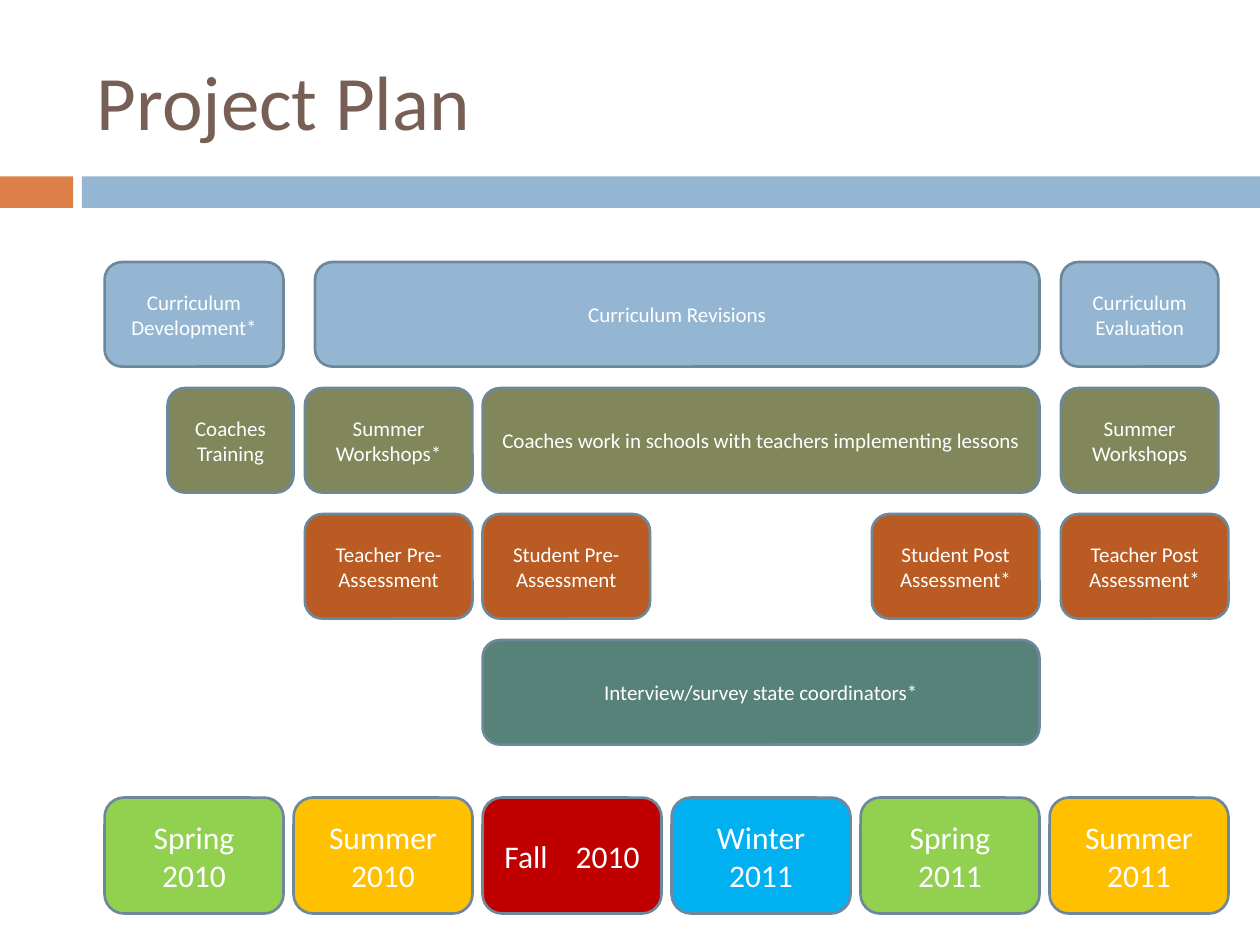
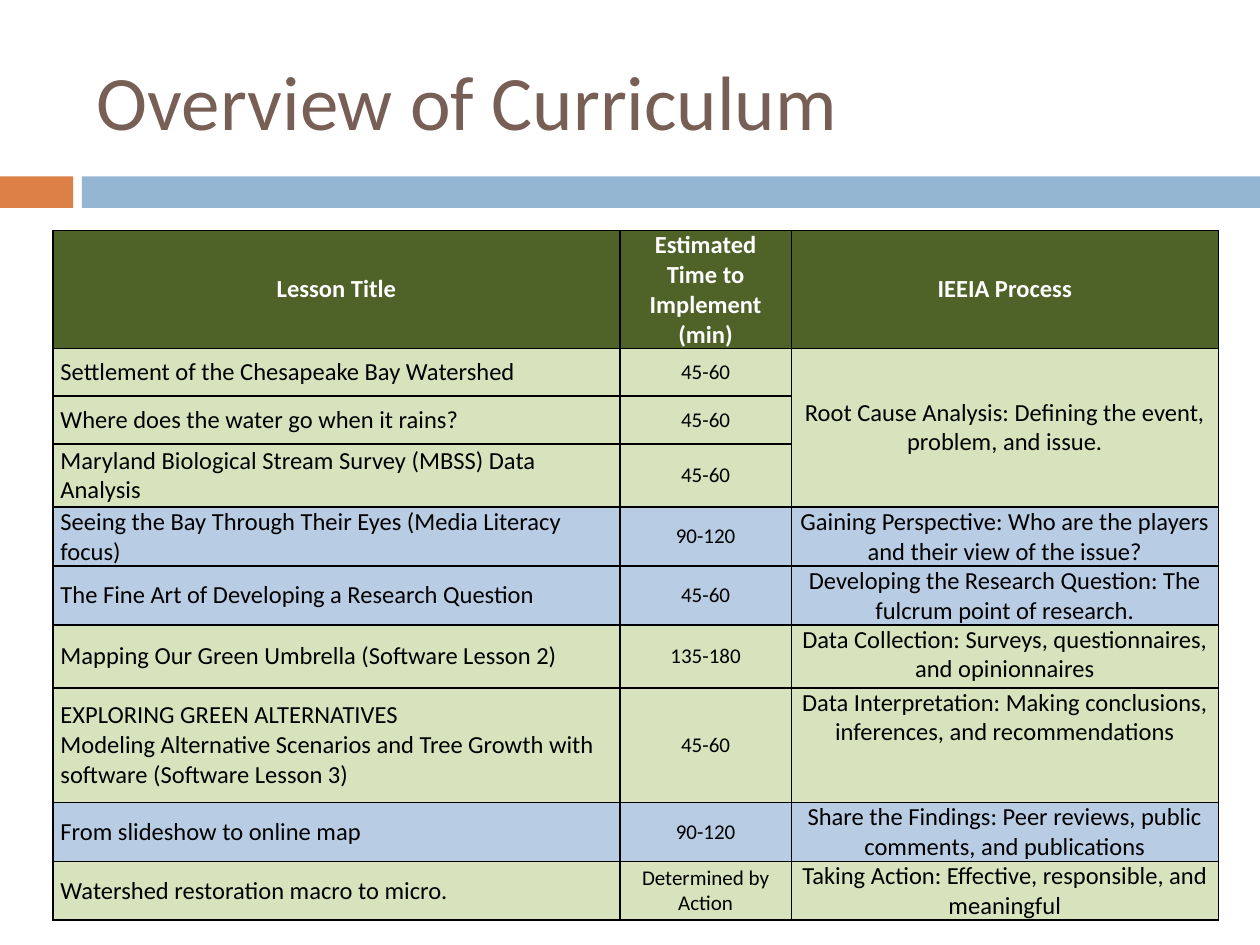
from dataclasses import dataclass

from lxml import etree
from pptx import Presentation
from pptx.dml.color import RGBColor
from pptx.enum import shapes, text
from pptx.oxml import ns
from pptx.util import Inches, Pt


@dataclass(frozen=True)
class Theme:
    font: str = "Calibri"
    title: str = "775F55"
    orange: str = "DD8047"
    blue: str = "94B6D2"
    outline: str = "6D879B"
    white: str = "FFFFFF"
    black: str = "000000"
    olive: str = "81875A"
    rust: str = "B95B22"
    teal: str = "578279"
    spring: str = "92D050"
    summer: str = "FFC000"
    fall: str = "C00000"
    winter: str = "00B0F0"
    header: str = "4F6228"
    green_row: str = "D6E3BC"
    blue_row: str = "B8CCE4"
    title_pt: int = 44
    season_pt: int = 18
    lesson_pt: int = 14
    small_pt: int = 12


T = Theme()
CENTER, LEFT = text.PP_ALIGN.CENTER, text.PP_ALIGN.LEFT
MIDDLE, TOP = text.MSO_ANCHOR.MIDDLE, text.MSO_ANCHOR.TOP


def add_box(s, kind, at, fill, line=None):
    sp = s.shapes.add_shape(kind, *map(Inches, at))
    sp.shadow.inherit = False
    sp.fill.solid()
    sp.fill.fore_color.rgb = RGBColor.from_string(fill)
    if line:
        sp.line.color.rgb = RGBColor.from_string(line)
        sp.line.width = Pt(1.5)
    else:
        sp.line.fill.background()
    return sp


def write(tf, words, size, color, align=CENTER, bold=False):
    tf.text = words
    tf.word_wrap = True
    for p in tf.paragraphs:
        p.alignment = align
        for r in p.runs:
            r.font.name = T.font
            r.font.size = Pt(size)
            r.font.bold = bold
            r.font.color.rgb = RGBColor.from_string(color)


prs = Presentation()
prs.slide_width, prs.slide_height = Inches(10), Inches(7.5)

slides = []
for title in ("Project Plan", "Overview of Curriculum"):
    s = prs.slides.add_slide(prs.slide_layouts[6])
    add_box(s, shapes.MSO_SHAPE.RECTANGLE, (0, 1.4, 0.58, 0.25), T.orange)
    add_box(s, shapes.MSO_SHAPE.RECTANGLE, (0.65, 1.4, 9.35, 0.25), T.blue)
    tf = s.shapes.add_textbox(Inches(0.67), Inches(0.25), Inches(8.92), Inches(1.08)).text_frame
    write(tf, title, T.title_pt, T.title, LEFT)
    tf.vertical_anchor = MIDDLE
    slides.append(s)
plan, overview = slides

seasons = [
    ("Spring 2010", T.spring),
    ("Summer 2010", T.summer),
    ("Fall 2010", T.fall),
    ("Winter 2011", T.winter),
    ("Spring 2011", T.spring),
    ("Summer 2011", T.summer),
]
for i, (season, fill) in enumerate(seasons):
    at = (0.83 + 1.5 * i, 6.33, 1.42, 0.92)
    tf = add_box(plan, shapes.MSO_SHAPE.ROUNDED_RECTANGLE, at, fill, T.outline).text_frame
    write(tf, season, T.season_pt, T.white)
    if season.startswith("Fall"):
        write(tf, "Fall", T.season_pt, T.white)
        p = tf.paragraphs[0]
        for part in (" ", "2010"):
            r = p.add_run()
            r.text = part
            r.font.name, r.font.size = T.font, Pt(T.season_pt)
            r.font.color.rgb = RGBColor.from_string(T.white)
        p.runs[1].font._element.set("spc", "1200")

activity_rows = [
    (T.blue, [
        (0.83, 1.42, "Curriculum Development*"),
        (2.5, 5.75, "Curriculum Revisions"),
        (8.42, 1.25, "Curriculum Evaluation"),
    ]),
    (T.olive, [
        (1.33, 1, "Coaches Training"),
        (2.42, 1.33, "Summer Workshops*"),
        (3.83, 4.42, "Coaches work in schools with teachers implementing lessons"),
        (8.42, 1.25, "Summer Workshops"),
    ]),
    (T.rust, [
        (2.42, 1.33, "Teacher Pre-Assessment"),
        (3.83, 1.33, "Student Pre-Assessment"),
        (6.92, 1.33, "Student Post Assessment*"),
        (8.42, 1.33, "Teacher Post Assessment*"),
    ]),
    (T.teal, [(3.83, 4.42, "Interview/survey state coordinators*")]),
]
for i, (fill, activities) in enumerate(activity_rows):
    for x, w, activity in activities:
        at = (x, 2.08 + i, w, 0.83)
        sp = add_box(plan, shapes.MSO_SHAPE.ROUNDED_RECTANGLE, at, fill, T.outline)
        write(sp.text_frame, activity, T.small_pt, T.white)

lessons = [
    (0.87, T.header, "Lesson Title", "Estimated Time to Implement (min)", "IEEIA Process"),
    (0.38, T.green_row, "Settlement of the Chesapeake Bay Watershed", "45-60",
     "Root Cause Analysis: Defining the event, problem, and issue."),
    (0.38, T.green_row, "Where does the water go when it rains?", "45-60", ""),
    (0.5, T.green_row, "Maryland Biological Stream Survey (MBSS) Data Analysis", "45-60", ""),
    (0.42, T.blue_row, "Seeing the Bay Through Their Eyes (Media Literacy focus)", "90-120",
     "Gaining Perspective: Who are the players and their view of the issue?"),
    (0.42, T.blue_row, "The Fine Art of Developing a Research Question", "45-60",
     "Developing the Research Question: The fulcrum point of research."),
    (0.5, T.green_row, "Mapping Our Green Umbrella (Software Lesson 2)", "135-180",
     "Data Collection: Surveys, questionnaires, and opinionnaires"),
    (0.91, T.green_row,
     "EXPLORING GREEN ALTERNATIVES\n"
     "Modeling Alternative Scenarios and Tree Growth with software (Software Lesson 3)",
     "45-60", "Data Interpretation: Making conclusions, inferences, and recommendations"),
    (0.42, T.blue_row, "From slideshow to online map", "90-120",
     "Share the Findings: Peer reviews, public comments, and publications"),
    (0.42, T.green_row, "Watershed restoration macro to micro.", "Determined by Action",
     "Taking Action: Effective, responsible, and meaningful"),
]
table = overview.shapes.add_table(
    len(lessons), 3, Inches(0.42), Inches(1.83), Inches(9.25), Inches(5.47)).table
table.first_row = table.horz_banding = False
for col, w in zip(table.columns, (4.5, 1.36, 3.39)):
    col.width = Inches(w)

for i, (height, fill, *words) in enumerate(lessons):
    table.rows[i].height = Inches(height)
    for j, word in enumerate(words):
        cell = table.cell(i, j)
        is_header = i == 0
        size = T.small_pt if j == 1 and not is_header else T.lesson_pt
        color = T.white if is_header else T.black
        align = LEFT if j == 0 and not is_header else CENTER
        write(cell.text_frame, word, size, color, align, is_header)
        cell.vertical_anchor = TOP if j == 2 and i >= 6 else MIDDLE
        cell.margin_left = cell.margin_right = Inches(0.06)
        cell.margin_top = cell.margin_bottom = 0
        tcPr = cell._tc.get_or_add_tcPr()
        for side in ("lnL", "lnR", "lnT", "lnB"):
            ln = etree.SubElement(tcPr, ns.qn(f"a:{side}"), w=str(Pt(1)))
            solid = etree.SubElement(ln, ns.qn("a:solidFill"))
            etree.SubElement(solid, ns.qn("a:srgbClr"), val=T.black)
        cell.fill.solid()
        cell.fill.fore_color.rgb = RGBColor.from_string(fill)
table.cell(1, 2).merge(table.cell(3, 2))

prs.save("out.pptx")
